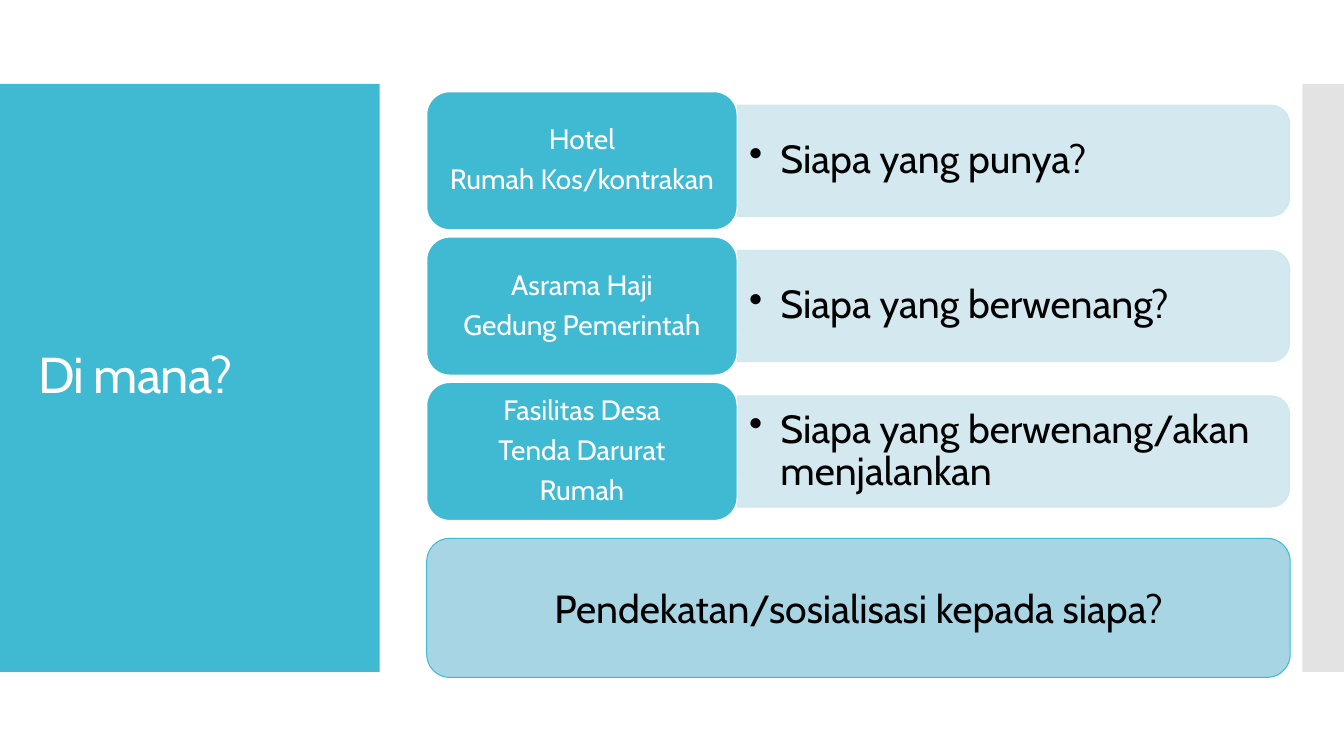
import pptx
import pptx.util
import pptx.dml.color
import pptx.enum.shapes
import pptx.enum.text
import pptx.oxml.ns
import lxml.etree

Pt = pptx.util.Pt
SHAPE = pptx.enum.shapes.MSO_SHAPE
ALIGN = pptx.enum.text.PP_ALIGN
COLORS = {"teal": "40BAD2", "pale": "CFE7EE", "sky": "A7D5E3",
          "grey": "C8C8C8", "white": "FFFFFF", "black": "000000"}
ROWS = [
    (["Hotel", "Rumah Kos/kontrakan"], "Siapa yang punya?"),
    (["Asrama Haji", "Gedung Pemerintah"], "Siapa yang berwenang?"),
    (["Fasilitas Desa", "Tenda Darurat", "Rumah"],
     "Siapa yang berwenang/akan menjalankan"),
]


class Deck:
    """Style and current slide; areas are percent of slide width and height."""
    font = "Cabin"

    def __init__(self):
        self.prs = pptx.Presentation()
        self.prs.slide_width = pptx.util.Inches(13.333)
        self.prs.slide_height = pptx.util.Inches(7.5)
        self.slide = self.prs.slides.add_slide(self.prs.slide_layouts[6])

    def area(self, left, top, width, height):
        wide, high = self.prs.slide_width, self.prs.slide_height
        return [round(share * size / 100) for share, size in
                ((left, wide), (top, high), (width, wide), (height, high))]

    def paint(self, fill, color, alpha):
        fill.solid()
        fill.fore_color.rgb = pptx.dml.color.RGBColor.from_string(COLORS[color])
        if alpha < 100:
            node = fill._xPr.find(".//" + pptx.oxml.ns.qn("a:srgbClr"))
            lxml.etree.SubElement(node, pptx.oxml.ns.qn("a:alpha"),
                                  val=str(alpha * 1000))

    def shape(self, kind, area, fill, line=None, weight=0.85, alpha=100, turn=False):
        """Draw a preset; turn rotates it a quarter so that it fills the area."""
        left, top, width, height = self.area(*area)
        if turn:
            left += (width - height) // 2
            top += (height - width) // 2
            width, height = height, width
        item = self.slide.shapes.add_shape(kind, left, top, width, height)
        item.rotation = 90 if turn else 0
        item.shadow.inherit = False
        self.paint(item.fill, fill, alpha)
        if line:
            self.paint(item.line.fill, line, alpha)
            item.line.width = Pt(weight)
        else:
            item.line.fill.background()
        return item

    def box(self, area):
        return self.slide.shapes.add_textbox(*self.area(*area))

    def label(self, item, lines, size, color, align=ALIGN.LEFT, pad=(0.1, 0.05),
              lead=0.9, after=0, bullet=False, track=0):
        frame = item.text_frame
        frame.word_wrap = True
        frame.vertical_anchor = pptx.enum.text.MSO_ANCHOR.MIDDLE
        frame.margin_left = frame.margin_right = pptx.util.Inches(pad[0])
        frame.margin_top = frame.margin_bottom = pptx.util.Inches(pad[1])
        frame.text = "\n".join(lines)
        for par in frame.paragraphs:
            par.alignment = align
            par.line_spacing = lead
            par.space_after = Pt(after)
            if bullet:
                props = par._p.get_or_add_pPr()
                dent = pptx.util.Inches(0.31)
                props.set("marL", str(dent))
                props.set("indent", str(-dent))
                lxml.etree.SubElement(props, pptx.oxml.ns.qn("a:buChar"), char="•")
            par.font.name = self.font
            par.font.size = Pt(size)
            par.font.color.rgb = pptx.dml.color.RGBColor.from_string(COLORS[color])
            if track:
                for run in par.runs:
                    run._r.get_or_add_rPr().set("spc", str(round(track * 100)))


def main():
    deck = Deck()
    deck.shape(SHAPE.RECTANGLE, (0, 11.11, 28.25, 77.78), "teal")
    deck.shape(SHAPE.RECTANGLE, (96.9, 11.11, 3.1, 77.78), "grey", alpha=50)
    deck.label(deck.box((2.1, 16.4, 24.15, 67.07)), ["Di mana?"], 36, "white",
               track=-0.6)

    left, wide, high, step = 31.75, 23.1, 18.27, 19.23
    side, band = left + wide, 14.7
    for row, (places, query) in enumerate(ROWS):
        top = 12.13 + row * step
        inner = top + (high - band) / 2
        deck.shape(SHAPE.ROUND_2_SAME_RECTANGLE, (side, inner, 41.1, band),
                   "pale", "pale", alpha=90, turn=True)
        deck.label(deck.box((side, inner, 40.72, band)), [query], 28, "black",
                   pad=(0.12, 0.06), after=4.2, bullet=True)
        place = deck.shape(SHAPE.ROUNDED_RECTANGLE, (left, top, wide, high),
                           "teal", "white")
        deck.label(place, places, 20, "white", ALIGN.CENTER, (0.08, 0.04), after=7)

    base = deck.shape(SHAPE.ROUNDED_RECTANGLE, (left, 71.2, 64.25, 18.4),
                      "sky", "teal", 0.75)
    deck.label(base, ["Pendekatan/sosialisasi kepada siapa?"], 28, "black",
               ALIGN.CENTER, lead=1)
    deck.prs.save("out.pptx")


if __name__ == "__main__":
    main()
